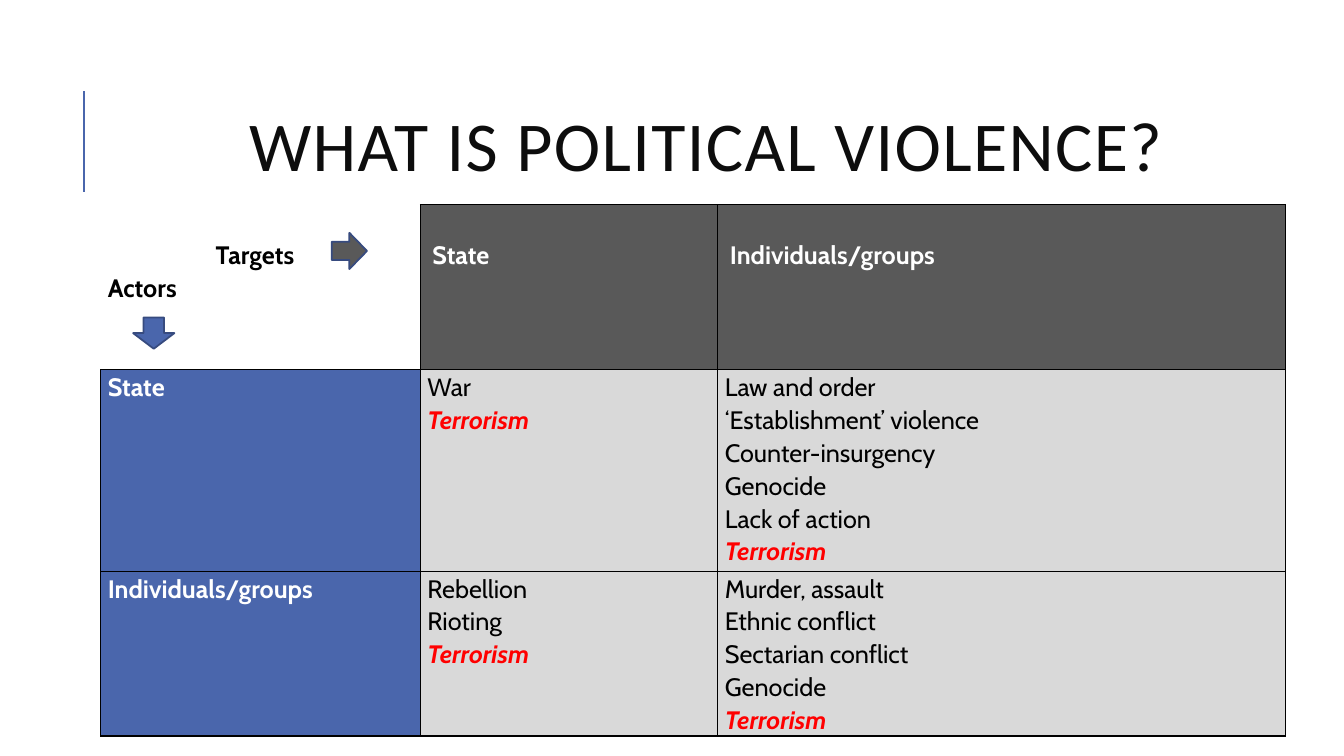
from lxml import etree
from pptx import Presentation
from pptx.dml import color
from pptx.enum import shapes, text
from pptx.oxml import ns
from pptx.util import Inches, Pt

BLUE, GRAY, PALE = "4A66AC", "595959", "D9D9D9"
BLACK, WHITE, RED = "000000", "FFFFFF", "FF0000"
OUTLINE, TITLE_INK = "374B7F", "0D0D0D"
KEYWORD = "Terrorism"
COLUMN_WIDTHS = (3.17, 2.95, 5.63)
ROW_HEIGHTS = (1.64, 2, 1.63)
LINE_HEIGHT = 0.33
ROWS = (
    (("Targets", "Actors"), ("State",), ("Individuals/groups",)),
    (("State",), ("War", KEYWORD),
     ("Law and order", "‘Establishment’ violence", "Counter-insurgency",
      "Genocide", "Lack of action", KEYWORD)),
    (("Individuals/groups",), ("Rebellion", "Rioting", KEYWORD),
     ("Murder, assault", "Ethnic conflict", "Sectarian conflict",
      "Genocide", KEYWORD)),
)


def rgb(hex_color):
    return color.RGBColor.from_string(hex_color)


def add_accent_line(slide, left, top, height):
    line = slide.shapes.add_connector(
        shapes.MSO_CONNECTOR.STRAIGHT,
        Inches(left), Inches(top + height), Inches(left), Inches(top))
    line.line.color.rgb = rgb(BLUE)
    line.line.width = Pt(1.5)
    etree.SubElement(line._element.spPr, ns.qn("a:effectLst"))


def add_title(slide, left, top, width, height):
    title = slide.shapes.title
    title.left, title.top = Inches(left), Inches(top)
    title.width, title.height = Inches(width), Inches(height)
    frame = title.text_frame
    frame.text = "WHAT IS POLITICAL VIOLENCE? "
    frame.word_wrap = True
    frame.auto_size = text.MSO_AUTO_SIZE.NONE
    frame.vertical_anchor = text.MSO_ANCHOR.MIDDLE
    paragraph = frame.paragraphs[0]
    paragraph.alignment = text.PP_ALIGN.CENTER
    paragraph.line_spacing = 0.8
    run = paragraph.runs[0]
    run.font.name, run.font.size = "Calibri", Pt(50)
    run.font.color.rgb = rgb(TITLE_INK)
    run._r.get_or_add_rPr().set("spc", "100")


def set_borders(cell, visible):
    """Draw the sides named in visible (from L, R, T, B) and clear the others."""
    properties = cell._tc.get_or_add_tcPr()
    for side in "LRTB":
        border = etree.SubElement(properties, ns.qn(f"a:ln{side}"), w=str(Pt(1)))
        if side in visible:
            fill = etree.SubElement(border, ns.qn("a:solidFill"))
            etree.SubElement(fill, ns.qn("a:srgbClr"), val=BLACK)
        else:
            etree.SubElement(border, ns.qn("a:noFill"))


def fill_cell(cell, lines, fill, ink, bold):
    cell.fill.solid()
    cell.fill.fore_color.rgb = rgb(fill)
    cell.margin_left = cell.margin_right = Inches(0.07)
    cell.margin_top = cell.margin_bottom = 0
    cell.text_frame.text = "\n".join(lines)
    for paragraph in cell.text_frame.paragraphs:
        paragraph.line_spacing = 1.07
        keyword = paragraph.text == KEYWORD
        font = paragraph.runs[0].font
        font.name, font.size = "Cabin", Pt(18)
        font.bold, font.italic = bold or keyword, keyword
        font.color.rgb = rgb(RED if keyword else ink)


def cell_style(row, column):
    """Return the fill, the text colour and whether the text is bold."""
    if row == column == 0:
        return WHITE, BLACK, True
    if row == 0:
        return GRAY, WHITE, True
    if column == 0:
        return BLUE, WHITE, True
    return PALE, BLACK, False


def add_matrix(slide, left, top):
    table = slide.shapes.add_table(
        len(ROWS), len(COLUMN_WIDTHS), Inches(left), Inches(top),
        Inches(sum(COLUMN_WIDTHS)), Inches(sum(ROW_HEIGHTS))).table
    table.first_row = table.horz_banding = False
    for column, width in zip(table.columns, COLUMN_WIDTHS):
        column.width = Inches(width)
    for row, height in zip(table.rows, ROW_HEIGHTS):
        row.height = Inches(height)
    for r, contents in enumerate(ROWS):
        for c, lines in enumerate(contents):
            cell = table.cell(r, c)
            set_borders(cell, "RB" if r == c == 0 else "LRTB")
            fill_cell(cell, lines, *cell_style(r, c))
            if r == 0:
                cell.margin_top = Inches(LINE_HEIGHT)
                if c > 0:
                    cell.margin_left = Inches(0.12)
    targets = table.cell(0, 0).text_frame.paragraphs[0]
    targets._p.get_or_add_pPr().set("marL", str(Inches(1.07)))

    right, down = shapes.MSO_SHAPE.RIGHT_ARROW, shapes.MSO_SHAPE.DOWN_ARROW
    add_arrow(slide, right, left + 2.29, top + 0.28, 0.35, 0.36, GRAY)
    add_arrow(slide, down, left + 0.32, top + 1.12, 0.41, 0.31, BLUE)


def add_arrow(slide, kind, left, top, width, height, fill):
    arrow = slide.shapes.add_shape(
        kind, Inches(left), Inches(top), Inches(width), Inches(height))
    arrow.shadow.inherit = False
    arrow.fill.solid()
    arrow.fill.fore_color.rgb = rgb(fill)
    arrow.line.color.rgb = rgb(OUTLINE)
    arrow.line.width = Pt(1.25)


def main():
    presentation = Presentation()
    presentation.slide_width = Inches(13.33)
    presentation.slide_height = Inches(7.5)
    slide = presentation.slides.add_slide(presentation.slide_layouts[5])
    add_accent_line(slide, 0.83, 0.9, 1)
    add_title(slide, 1.12, 0.68, 11.94, 1.64)
    add_matrix(slide, 1, 2.03)
    presentation.save("out.pptx")


if __name__ == "__main__":
    main()
